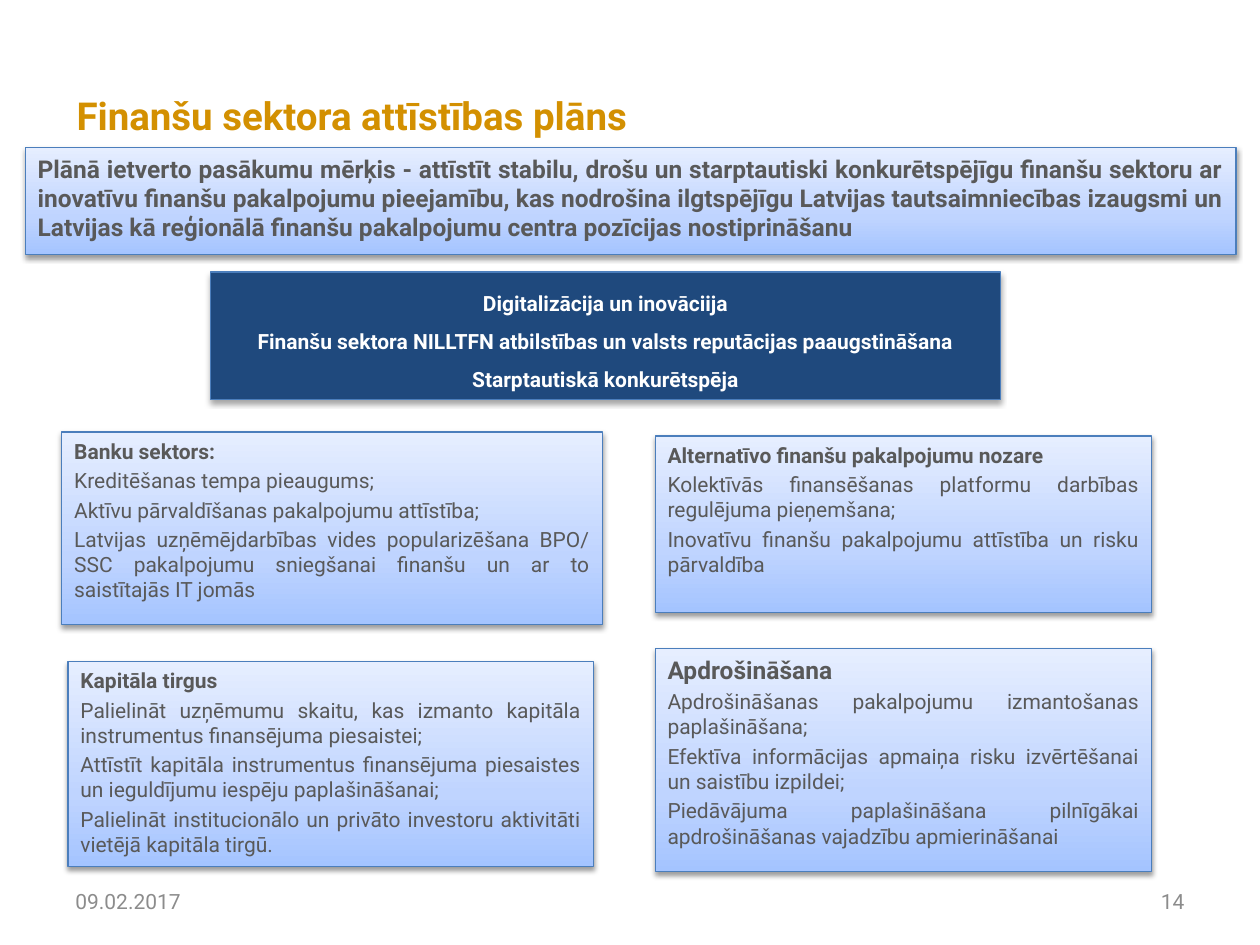
from dataclasses import dataclass

from lxml.etree import SubElement
from pptx import Presentation
from pptx.dml.color import RGBColor
from pptx.enum.shapes import MSO_SHAPE
from pptx.enum.text import MSO_ANCHOR, PP_ALIGN
from pptx.oxml.ns import qn
from pptx.util import Inches, Pt

FONT = "Roboto"
GOLD = RGBColor(0xD3, 0x90, 0x01)
NAVY = RGBColor(0x1F, 0x49, 0x7D)
BORDER = RGBColor(0x4B, 0x7E, 0xBC)
TEXT = RGBColor(0x59, 0x59, 0x59)
GREY = RGBColor(0x8C, 0x8C, 0x8C)
WHITE = RGBColor(0xFF, 0xFF, 0xFF)
BLACK = RGBColor(0x00, 0x00, 0x00)
PANEL_STOPS = (
    (0, RGBColor(0xA4, 0xC4, 0xFF)),
    (35, RGBColor(0xBF, 0xD4, 0xFF)),
    (100, RGBColor(0xE6, 0xEE, 0xFF)),
)


@dataclass(frozen=True)
class Box:
    left: float
    top: float
    width: float
    height: float

    def emu(self):
        return [Inches(v) for v in (self.left, self.top, self.width, self.height)]


@dataclass(frozen=True)
class Panel:
    """A bold heading over justified paragraphs."""
    box: Box
    heading: str
    items: tuple[str, ...] = ()
    heading_size: int = 12


PANELS = (
    Panel(Box(0.2, 1.17, 9.61, 0.85),
          "Plānā ietverto pasākumu mērķis - attīstīt stabilu, drošu un starptautiski "
          "konkurētspējīgu finanšu sektoru ar inovatīvu finanšu pakalpojumu pieejamību, "
          "kas nodrošina ilgtspējīgu Latvijas tautsaimniecības izaugsmi un Latvijas kā "
          "reģionālā finanšu pakalpojumu centra pozīcijas nostiprināšanu",
          heading_size=14),
    Panel(Box(0.54, 5.25, 4.17, 1.63), "Kapitāla tirgus", (
        "Palielināt uzņēmumu skaitu, kas izmanto kapitāla instrumentus finansējuma piesaistei;",
        "Attīstīt kapitāla instrumentus finansējuma piesaistes un ieguldījumu iespēju "
        "paplašināšanai;",
        "Palielināt institucionālo un privāto investoru aktivitāti vietējā kapitāla tirgū.")),
    Panel(Box(5.2, 5.15, 3.94, 1.77), "Apdrošināšana", (
        "Apdrošināšanas pakalpojumu izmantošanas paplašināšana;",
        "Efektīva informācijas apmaiņa risku izvērtēšanai un saistību izpildei;",
        "Piedāvājuma paplašināšana pilnīgākai apdrošināšanas vajadzību apmierināšanai"),
        heading_size=14),
    Panel(Box(0.49, 3.43, 4.29, 1.53), "Banku sektors:", (
        "Kreditēšanas tempa pieaugums;",
        "Aktīvu pārvaldīšanas pakalpojumu attīstība;",
        "Latvijas uzņēmējdarbības vides popularizēšana BPO/ SSC pakalpojumu sniegšanai "
        "finanšu un ar to saistītajās IT jomās")),
    Panel(Box(5.2, 3.46, 3.94, 1.4), "Alternatīvo finanšu pakalpojumu nozare", (
        "Kolektīvās finansēšanas platformu darbības regulējuma pieņemšana;",
        "Inovatīvu finanšu pakalpojumu attīstība un risku pārvaldība")),
)
PRIORITIES = (
    "Digitalizācija un inovāciija",
    "Finanšu sektora NILLTFN atbilstības un valsts reputācijas paaugstināšana",
    "Starptautiskā konkurētspēja",
)


def add_run(p, text: str, size: float, color: RGBColor, bold: bool = False) -> None:
    r = p.add_run()
    r.text = text
    r.font.name = FONT
    r.font.size = Pt(size)
    r.font.bold = bold
    r.font.color.rgb = color


def next_paragraph(tf, first: bool):
    return tf.paragraphs[0] if first else tf.add_paragraph()


def add_stop(parent, tag: str, color: RGBColor, **attrs: str):
    el = SubElement(parent, qn(tag), **attrs)
    return SubElement(el, qn("a:srgbClr"), val=str(color))


def add_card(slide, box: Box, shadow_alpha: int, shadow_distance: float):
    """Add an outlined rectangle with a soft shadow below it."""
    sp = slide.shapes.add_shape(MSO_SHAPE.RECTANGLE, *box.emu())
    sp.line.color.rgb = BORDER
    sp.line.width = Pt(0.75)
    sp.shadow.inherit = False
    effects = sp._element.spPr.find(qn("a:effectLst"))
    color = add_stop(effects, "a:outerShdw", BLACK, blurRad=str(Pt(3.1)),
                     dist=str(Pt(shadow_distance)), dir="5400000", rotWithShape="0")
    SubElement(color, qn("a:alpha"), val=str(shadow_alpha * 1000))
    sp.text_frame.word_wrap = True
    sp.text_frame.vertical_anchor = MSO_ANCHOR.TOP
    return sp


def fill_gradient(sp) -> None:
    sp.fill.gradient()
    sp.fill.gradient_angle = 90
    stops = sp._element.spPr.find(qn("a:gradFill")).find(qn("a:gsLst"))
    for stop in list(stops):
        stops.remove(stop)
    for position, color in PANEL_STOPS:
        add_stop(stops, "a:gs", color, pos=str(position * 1000))


def add_panel(slide, panel: Panel) -> None:
    sp = add_card(slide, panel.box, 38, 1.6)
    fill_gradient(sp)
    for i, text in enumerate((panel.heading, *panel.items)):
        p = next_paragraph(sp.text_frame, i == 0)
        p.alignment = PP_ALIGN.JUSTIFY
        if i:
            p.space_before = Pt(2.4)
        add_run(p, text, 12 if i else panel.heading_size, TEXT, bold=i == 0)


def add_priorities(slide) -> None:
    sp = add_card(slide, Box(1.67, 2.16, 6.27, 1.01), 35, 1.8)
    sp.fill.solid()
    sp.fill.fore_color.rgb = NAVY
    for i, text in enumerate(PRIORITIES):
        p = next_paragraph(sp.text_frame, i == 0)
        p.alignment = PP_ALIGN.CENTER
        p.line_spacing = 1.5
        add_run(p, text, 12, WHITE, bold=True)


def add_label(slide, box: Box, text: str, size: float, color: RGBColor,
              bold: bool = False, align: PP_ALIGN = PP_ALIGN.LEFT) -> None:
    tf = slide.shapes.add_textbox(*box.emu()).text_frame
    tf.word_wrap = True
    tf.vertical_anchor = MSO_ANCHOR.MIDDLE
    p = tf.paragraphs[0]
    p.alignment = align
    add_run(p, text, size, color, bold)


def main() -> None:
    prs = Presentation()
    prs.slide_width = Inches(10)
    prs.slide_height = Inches(7.5)
    slide = prs.slides.add_slide(prs.slide_layouts[6])

    add_label(slide, Box(0.51, 0.68, 6.22, 0.47), "Finanšu sektora attīstības plāns",
              22, GOLD, bold=True)
    for panel in PANELS:
        add_panel(slide, panel)
    add_priorities(slide)
    add_label(slide, Box(0.5, 6.95, 2.33, 0.4), "09.02.2017", 12, GREY)
    add_label(slide, Box(7.17, 6.95, 2.33, 0.4), "14", 12, GREY, align=PP_ALIGN.RIGHT)
    prs.save("out.pptx")


if __name__ == "__main__":
    main()
